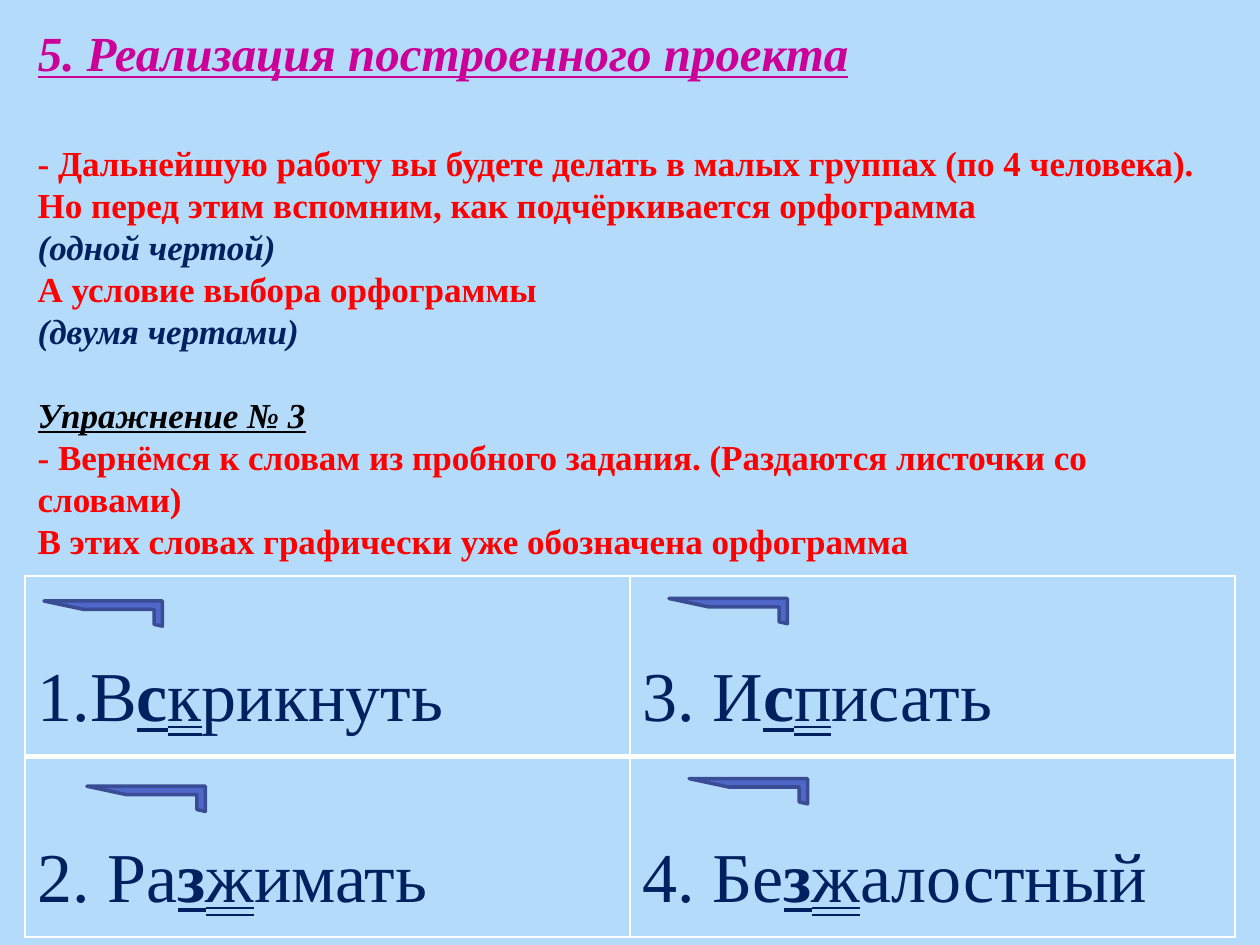
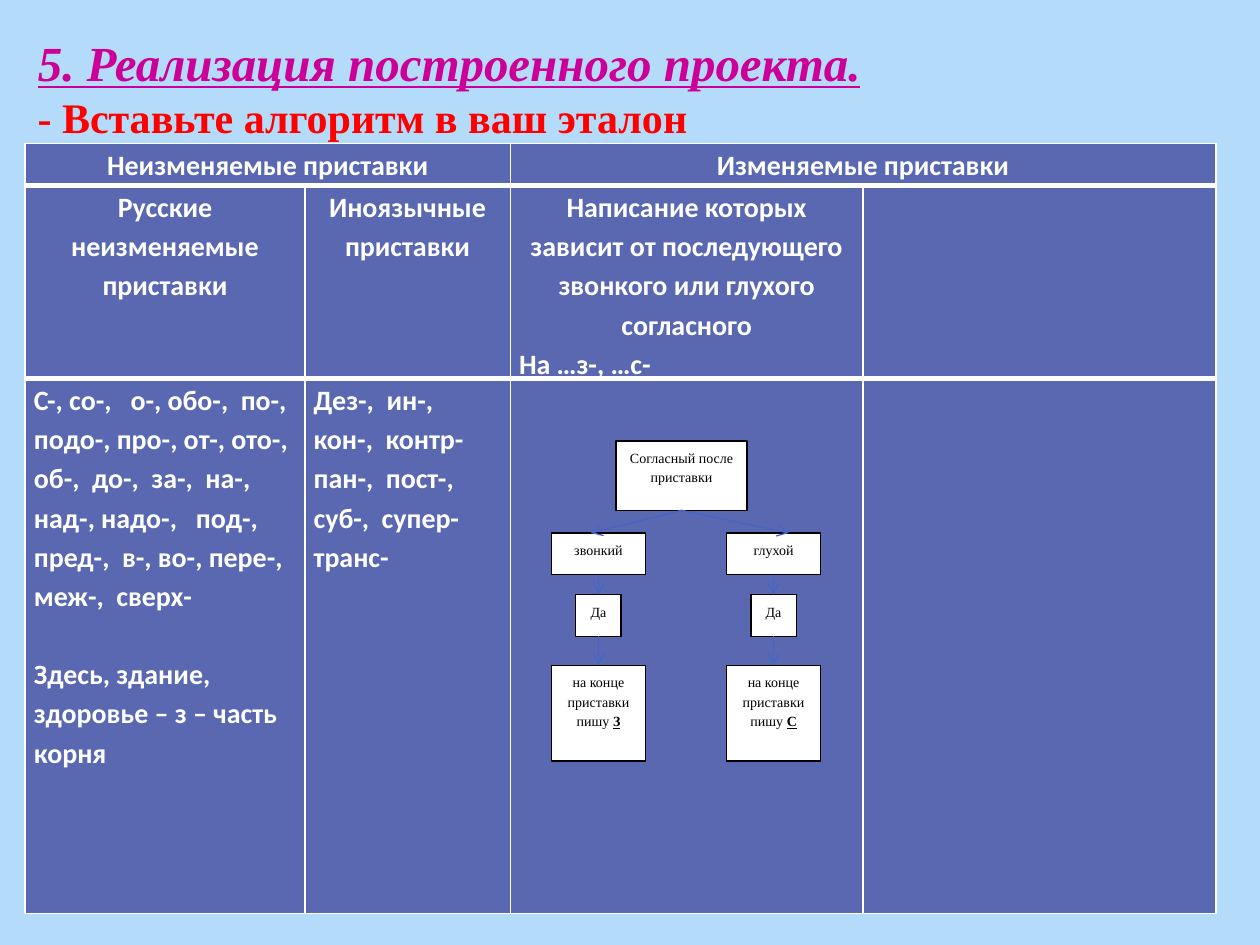
import pptx
import pptx.util
import pptx.dml.color
import pptx.enum.shapes
import pptx.enum.text
import pptx.oxml
import pptx.oxml.ns
import pptx.oxml.xmlchemy

Inches, Pt = pptx.util.Inches, pptx.util.Pt
ALIGN = pptx.enum.text.PP_ALIGN
SHAPE = pptx.enum.shapes.MSO_SHAPE
DOUBLE = pptx.enum.text.MSO_UNDERLINE.DOUBLE_LINE

# Shared look
SKY, WHITE, BLACK = "B4DCFA", "FFFFFF", "000000"
PINK, RED, NAVY = "CC0099", "FF0000", "002060"
PANEL, FRAME, EDGE, ARROW = "5968B0", "4E67C8", "3A4C94", "4963C7"
SERIF, SANS = "Times New Roman", "Calibri"
LEFT, WIDE = 0.2, 9.61


def tint(code):
    return pptx.dml.color.RGBColor.from_string(code)


def node(tag, **attrs):
    item = pptx.oxml.xmlchemy.OxmlElement(tag)
    for name, value in attrs.items():
        item.set(name, str(value))
    return item


def write(frame, paras, font=SERIF, size=20, color=BLACK, bold=False,
          align=ALIGN.LEFT, space=1.0, after=0):
    """Each paragraph is a text, or (runs, before, align); a run is (text, style)."""
    frame.word_wrap = True
    for index, para in enumerate(paras):
        if isinstance(para, str):
            para = ([(para, {})], 0, align)
        runs, before, side = para
        line = frame.paragraphs[0] if index == 0 else frame.add_paragraph()
        line.alignment, line.line_spacing = side, space
        line.space_before, line.space_after = Pt(before), Pt(after)
        for text, style in runs:
            run = line.add_run()
            run.text = text
            run.font.name, run.font.size = font, Pt(size)
            run.font.bold = style.get("bold", bold)
            run.font.italic = style.get("italic", False)
            run.font.underline = style.get("under", False)
            run.font.color.rgb = tint(style.get("color", color))


def start(deck, title, top):
    slide = deck.slides.add_slide(deck.slide_layouts[5])
    head = slide.shapes.title
    head.left, head.top = Inches(LEFT), Inches(top)
    head.width, head.height = Inches(WIDE), Inches(0.56)
    frame = head.text_frame
    frame.auto_size = pptx.enum.text.MSO_AUTO_SIZE.NONE
    frame.vertical_anchor = pptx.enum.text.MSO_ANCHOR.TOP
    style = dict(italic=True, under=True)
    write(frame, [([(title, style)], 0, ALIGN.LEFT)],
          size=28, color=PINK, bold=True)
    return slide


def note(slide, top, height, paras, **form):
    box = slide.shapes.add_textbox(Inches(LEFT), Inches(top),
                                   Inches(WIDE), Inches(height))
    write(box.text_frame, paras, color=RED, bold=True, **form)


def border(cell, top, bottom):
    props = cell._tc.get_or_add_tcPr()
    widths = (("L", 1), ("R", 1), ("T", top), ("B", bottom))
    for index, (side, width) in enumerate(widths):
        line = node("a:ln" + side, w=Pt(width))
        fill = node("a:solidFill")
        fill.append(node("a:srgbClr", val=WHITE))
        line.append(fill)
        props.insert(index, line)


def grid(slide, top, cols, rows, fill):
    """Table with white rules, thick between rows."""
    table = slide.shapes.add_table(
        len(rows), len(cols), Inches(LEFT), Inches(top),
        Inches(sum(cols)), Inches(sum(rows))).table
    table.first_row = table.horz_banding = False
    for col, width in zip(table.columns, cols):
        col.width = Inches(width)
    for index, height in enumerate(rows):
        table.rows[index].height = Inches(height)
        for cell in table.rows[index].cells:
            cell.fill.solid()
            cell.fill.fore_color.rgb = tint(fill)
            border(cell, 3 if index else 1, 3 if index < len(rows) - 1 else 1)
    return table


def shape(slide, kind, place, fill, line, width):
    item = slide.shapes.add_shape(kind, *map(Inches, place))
    item.shadow.inherit = False
    item.fill.solid()
    item.fill.fore_color.rgb = tint(fill)
    item.line.color.rgb = tint(line)
    item.line.width = Pt(width)
    return item


def prefix(slide, left, top):
    """Mark drawn above a prefix."""
    mark = shape(slide, SHAPE.HALF_FRAME, (left, top, 0.94, 0.2), FRAME, EDGE, 2)
    mark._element.spPr.find(pptx.oxml.ns.qn("a:xfrm")).set("flipH", "1")


def block(slide, mid, top, width, height, runs):
    box = shape(slide, SHAPE.RECTANGLE, (mid - width / 2, top, width, height),
                WHITE, BLACK, 0.75)
    box.text_frame.vertical_anchor = pptx.enum.text.MSO_ANCHOR.TOP
    write(box.text_frame, [(runs, 0, ALIGN.CENTER)], size=8, space=1.15, after=10)
    return box


def arrow(slide, source, target, end=None):
    """Arrow from the foot of source to the top of target, or to the point end."""
    x, y = end or (0, 0)
    line = slide.shapes.add_connector(
        pptx.enum.shapes.MSO_CONNECTOR.STRAIGHT, 0, 0, Inches(x), Inches(y))
    line.begin_connect(source, 2)
    if end is None:
        line.end_connect(target, 0)
    line.line.color.rgb = tint(ARROW)
    line.line.width = Pt(0.75)
    line.line._get_or_add_ln().append(node("a:tailEnd", type="arrow"))
    line._element.spPr.append(node("a:effectLst"))


def words(deck):
    slide = start(deck, "5. Реализация построенного проекта", 0.13)
    hint = dict(color=NAVY, italic=True)
    task = dict(color=BLACK, italic=True, under=True)
    note(slide, 1.07, 3.47, [
        "- Дальнейшую работу вы будете делать в малых группах (по 4 человека). "
        "Но перед этим вспомним, как подчёркивается орфограмма",
        ([("(одной чертой)", hint)], 0, ALIGN.LEFT),
        "А условие выбора орфограммы",
        ([("(двумя чертами)", hint)], 0, ALIGN.LEFT),
        ([("Упражнение № 3", task)], 24, ALIGN.LEFT),
        "- Вернёмся к словам из пробного задания. (Раздаются листочки со словами)",
        "В этих словах графически уже обозначена орфограмма",
    ])

    # Words: lead, spelling letter, condition letter, rest
    table = grid(slide, 4.57, [4.8, 4.8], [1.42, 1.42], SKY)
    parts = [[("В", "с", "к", "рикнуть"), ("3. И", "с", "п", "исать")],
             [("2. Ра", "з", "ж", "имать"), ("4. Бе", "з", "ж", "алостный")]]
    styles = ({}, dict(bold=True, under=True), dict(under=DOUBLE), {})
    for row, items in enumerate(parts):
        for col, item in enumerate(items):
            write(table.cell(row, col).text_frame,
                  [(list(zip(item, styles)), 0, ALIGN.LEFT)],
                  size=40, color=NAVY, space=2.0)

    # Automatic number of the first word
    props = table.cell(0, 0).text_frame.paragraphs[0]._p.get_or_add_pPr()
    props.set("marL", str(Inches(0.38)))
    props.set("indent", str(-Inches(0.38)))
    props.append(node("a:buFont", typeface="+mj-lt"))
    props.append(node("a:buAutoNum", type="arabicPeriod"))

    for left, top in ((0.35, 4.77), (5.47, 6.18), (0.69, 6.24), (5.31, 4.75)):
        prefix(slide, left, top)


def chart(slide):
    """Decision tree for the last letter of a prefix."""
    root = block(slide, 5.41, 3.5, 1.04, 0.55, [("Согласный после приставки", {})])
    sides = ((4.75, "звонкий", "З", 4.69), (6.14, "глухой", "С", 6.26))
    for mid, sound, letter, tip in sides:
        kind = block(slide, mid, 4.23, 0.75, 0.33, [(sound, {})])
        yes = block(slide, mid, 4.72, 0.36, 0.33, [("Да", {})])
        rule = block(slide, mid, 5.28, 0.75, 0.76, [
            ("на конце приставки пишу ", {}),
            (letter, dict(bold=True, under=True))])
        arrow(slide, root, kind, (tip, 4.23))
        arrow(slide, kind, yes)
        arrow(slide, yes, rule)


def model(deck):
    slide = start(deck, "5. Реализация построенного проекта.", 0.21)
    note(slide, 0.68, 0.5, ["- Вставьте алгоритм в ваш эталон"], size=24)

    table = grid(slide, 1.14, [2.22, 1.63, 2.8, 2.8], [0.33, 1.51, 4.25], PANEL)
    for col in (0, 2):
        table.cell(0, col).merge(table.cell(0, col + 1))
    mid, left = ALIGN.CENTER, ALIGN.LEFT
    texts = {
        (0, 0): (mid, ["Неизменяемые приставки"]),
        (0, 2): (mid, ["Изменяемые приставки"]),
        (1, 0): (mid, ["Русские неизменяемые приставки"]),
        (1, 1): (mid, ["Иноязычные приставки"]),
        (1, 2): (mid, ["Написание которых зависит от последующего "
                       "звонкого или глухого согласного",
                       ([("На …з-, …с-", {})], 0, left)]),
        (2, 0): (left, ["С-, со-,   о-, обо-,  по-, подо-, про-, от-, ото-, "
                        "об-,  до-,  за-,  на-,  над-, надо-,   под-,  пред-,  "
                        "в-, во-, пере-, меж-,  сверх-",
                        ([("Здесь, здание, здоровье – з – часть корня", {})],
                         22, left)]),
        (2, 1): (left, ["Дез-,  ин-,  кон-,  контр-  пан-,  пост-,  суб-,  "
                        "супер- транс-"]),
    }
    for (row, col), (align, paras) in texts.items():
        cell = table.cell(row, col)
        cell.margin_left = cell.margin_right = Inches(0.07)
        cell.margin_top = cell.margin_bottom = 0
        write(cell.text_frame, paras, font=SANS, size=16, color=WHITE,
              bold=True, align=align, space=1.15)
    chart(slide)


def main():
    deck = pptx.Presentation()
    deck.slide_width, deck.slide_height = Inches(10), Inches(7.5)
    back = deck.slide_master.background.fill
    back.solid()
    back.fore_color.rgb = tint(SKY)
    words(deck)
    model(deck)
    deck.save("out.pptx")


if __name__ == "__main__":
    main()
